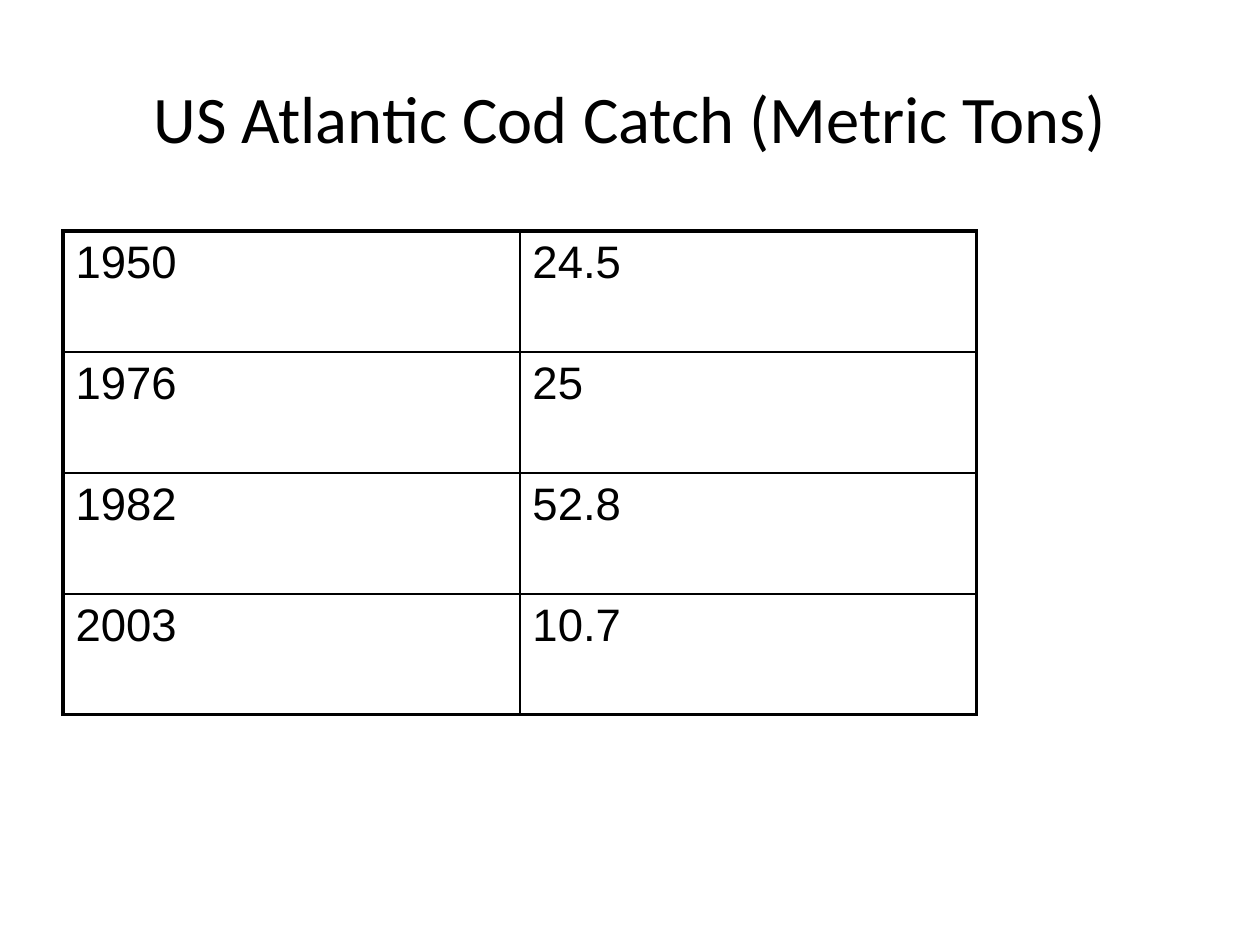
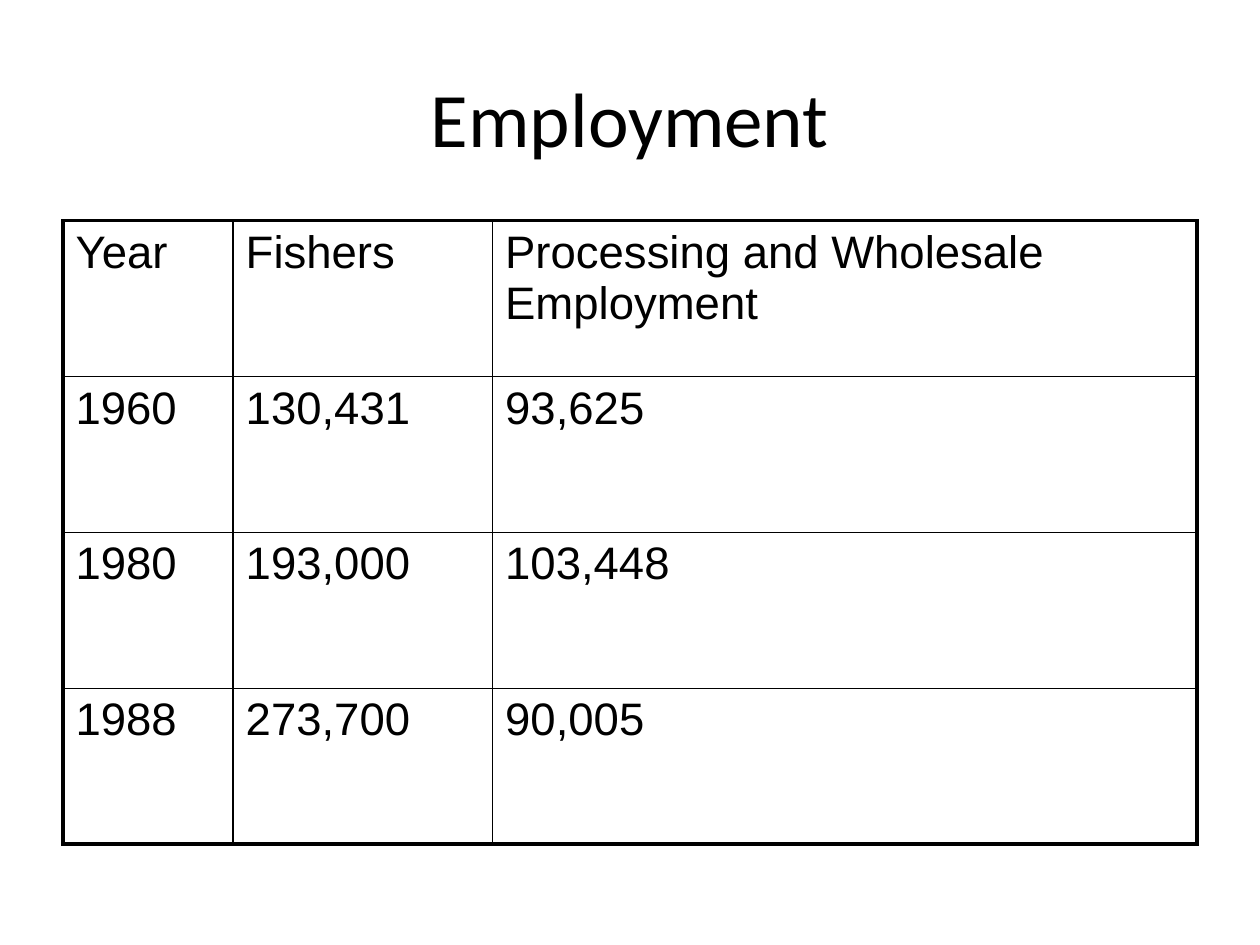
from dataclasses import dataclass

from lxml import etree
from pptx import Presentation
from pptx import util as u
from pptx.dml.color import RGBColor
from pptx.enum import text
from pptx.oxml import ns


@dataclass(frozen=True)
class Theme:
    ink: str = "000000"
    paper: str = "FFFFFF"
    title_font: str = "Calibri"
    body_font: str = "Arial"
    title_size: int = 44
    long_title_size: int = 38
    body_size: int = 26
    outer_line: float = 2.25
    inner_line: float = 1


@dataclass(frozen=True)
class Box:
    left: float
    top: float
    width: float
    height: float

    def lengths(self):
        return [u.Cm(side) for side in (self.left, self.top, self.width, self.height)]


THEME = Theme()
TITLE_BOX = Box(1.27, 0.76, 22.86, 3.18)
TITLE_ONLY_LAYOUT = 5

COD_CATCH = [
    ("1950", "24.5"),
    ("1976", "25"),
    ("1982", "52.8"),
    ("2003", "10.7"),
]
EMPLOYMENT = [
    ("Year", "Fishers", "Processing and Wholesale Employment"),
    ("1960", "130,431", "93,625"),
    ("1980", "193,000", "103,448"),
    ("1988", "273,700", "90,005"),
]


def style_font(font, name, size):
    font.name = name
    font.size = u.Pt(size)
    font.color.rgb = RGBColor.from_string(THEME.ink)


def place_title(page, box, wording, size):
    title = page.shapes.title
    title.left, title.top, title.width, title.height = box.lengths()
    frame = title.text_frame
    frame.text = wording
    frame.word_wrap = True
    frame.auto_size = text.MSO_AUTO_SIZE.NONE
    frame.vertical_anchor = text.MSO_ANCHOR.MIDDLE
    para = frame.paragraphs[0]
    para.alignment = text.PP_ALIGN.CENTER
    style_font(para.font, THEME.title_font, size)


def draw_borders(cell, outer_sides):
    properties = cell._tc.get_or_add_tcPr()
    for position, (side, is_outer) in enumerate(outer_sides.items()):
        width = THEME.outer_line if is_outer else THEME.inner_line
        line = etree.Element(ns.qn(f"a:ln{side}"), w=str(u.Pt(width)))
        fill = etree.SubElement(line, ns.qn("a:solidFill"))
        etree.SubElement(fill, ns.qn("a:srgbClr"), val=THEME.ink)
        properties.insert(position, line)


def place_table(page, box, records, column_widths):
    last_row = len(records) - 1
    last_column = len(column_widths) - 1
    table = page.shapes.add_table(
        len(records), len(column_widths), *box.lengths()
    ).table
    table.first_row = False
    table.horz_banding = False
    for column, width in zip(table.columns, column_widths):
        column.width = u.Cm(width)
    for r, record in enumerate(records):
        table.rows[r].height = u.Cm(box.height / len(records))
        for c, wording in enumerate(record):
            cell = table.cell(r, c)
            cell.text = wording
            cell.fill.background()
            style_font(
                cell.text_frame.paragraphs[0].font, THEME.body_font, THEME.body_size
            )
            draw_borders(
                cell,
                {
                    "L": c == 0,
                    "R": c == last_column,
                    "T": r == 0,
                    "B": r == last_row,
                },
            )


def add_table_slide(deck, wording, title_size, box, records, column_widths):
    page = deck.slides.add_slide(deck.slide_layouts[TITLE_ONLY_LAYOUT])
    page.background.fill.solid()
    page.background.fill.fore_color.rgb = RGBColor.from_string(THEME.paper)
    place_title(page, TITLE_BOX, wording, title_size)
    place_table(page, box, records, column_widths)


def main():
    deck = Presentation()
    deck.slide_width = u.Cm(25.4)
    deck.slide_height = u.Cm(19.05)
    add_table_slide(
        deck,
        "US Atlantic Cod Catch (Metric Tons)",
        THEME.long_title_size,
        Box(1.27, 4.66, 18.42, 9.75),
        COD_CATCH,
        [9.21, 9.21],
    )
    add_table_slide(
        deck,
        "Employment",
        THEME.title_size,
        Box(1.27, 4.45, 22.86, 12.57),
        EMPLOYMENT,
        [3.43, 5.23, 14.2],
    )
    deck.save("out.pptx")


if __name__ == "__main__":
    main()
